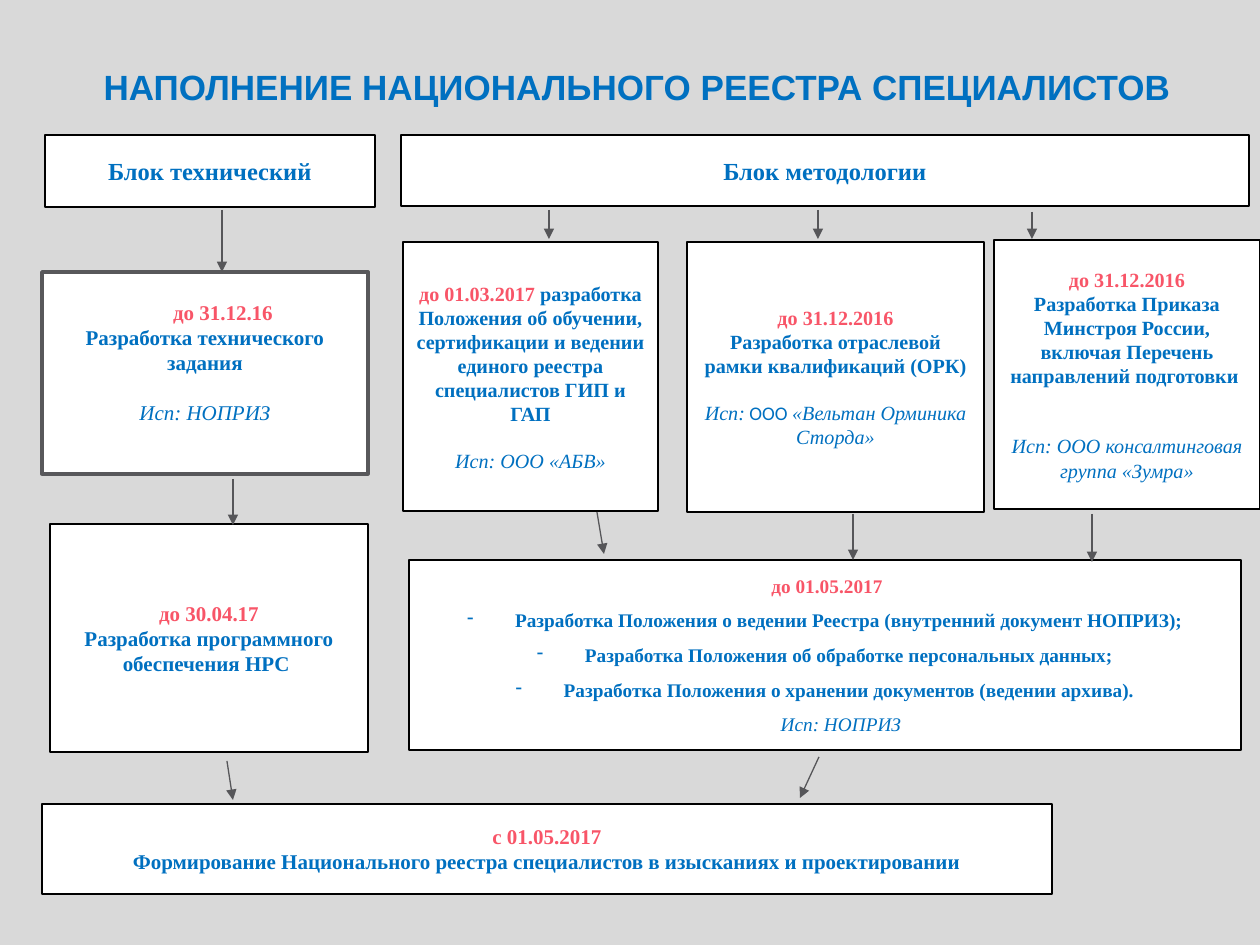
from lxml.etree import SubElement
from pptx import Presentation
from pptx.dml.color import RGBColor
from pptx.enum.shapes import MSO_CONNECTOR, MSO_SHAPE
from pptx.enum.text import MSO_ANCHOR, PP_ALIGN
from pptx.oxml.ns import qn
from pptx.util import Emu, Pt

PX = 914400 // 126
BLUE, RED, BLACK, GREY, ARROW = "0070C0", "F85568", "000000", "58585B", "565659"
SERIF = "Times New Roman"

STYLES = {
    "date": {"color": RED, "bold": True},
    "task": {"color": BLUE, "bold": True},
    "performer": {"color": BLUE, "italic": True},
    "form": {"color": BLUE, "font": "Calibri", "size": 11},
}

TITLE = {"at": (63, 38, 1148, 98), "size": 20, "font": "Arial",
         "lines": [{"runs": [("task", "НАПОЛНЕНИЕ НАЦИОНАЛЬНОГО РЕЕСТРА СПЕЦИАЛИСТОВ")]}]}

STAGES = [
    {"at": (45, 135, 330, 72), "size": 14,
     "lines": [{"runs": [("task", "Блок технический")]}]},
    {"at": (401, 135, 848, 71), "size": 14,
     "lines": [{"runs": [("task", "Блок методологии")]}]},
    {"at": (42, 272, 326, 202), "size": 12, "border": (GREY, 2), "bottom": 28,
     "lines": [
         {"runs": [("date", "до 31.12.16")], "margin": 36},
         {"runs": [("task", "Разработка технического задания")]},
         {"runs": [("performer", "Исп: НОПРИЗ")], "before": 13.8}]},
    {"at": (50, 524, 318, 228), "size": 12,
     "lines": [
         {"runs": [("date", "до 30.04.17")]},
         {"runs": [("task", "Разработка программного обеспечения НРС ")]}]},
    {"at": (403, 242, 255, 269), "size": 11.5,
     "lines": [
         {"runs": [("date", "до 01.03.2017 "),
                   ("task", "разработка Положения об обучении, сертификации и ведении "
                            "единого реестра специалистов ГИП и ГАП")]},
         {"runs": [("performer", "Исп: ООО «АБВ»")], "before": 12.6}]},
    {"at": (687, 242, 297, 270), "size": 11.5,
     "lines": [
         {"runs": [("date", "до 31.12.2016")]},
         {"runs": [("task", "Разработка отраслевой рамки квалификаций (ОРК)")]},
         {"runs": [("performer", "Исп:"), ("form", " ООО "),
                   ("performer", "«Вельтан Орминика Сторда»")], "before": 13.2}]},
    {"at": (994, 240, 266, 269), "size": 11.5,
     "lines": [
         {"runs": [("date", "до 31.12.2016")]},
         {"runs": [("task", "Разработка Приказа Минстроя России, включая Перечень "
                            "направлений подготовки ")]},
         {"runs": [("performer", "Исп: ООО консалтинговая группа «Зумра»")],
          "before": 26.4}]},
    {"at": (409, 560, 832, 190), "size": 11,
     "lines": [
         {"runs": [("date", "до 01.05.2017")], "margin": 4},
         *[{"runs": [("task", regulation)], "margin": 48, "bullet": "-", "spacing": 1.5}
           for regulation in (
               "Разработка Положения о ведении Реестра (внутренний документ НОПРИЗ);",
               "Разработка Положения об обработке персональных данных;",
               "Разработка Положения о хранении документов (ведении архива).")],
         {"runs": [("performer", "Исп: НОПРИЗ")], "margin": 32, "spacing": 1.5}]},
    {"at": (42, 804, 1010, 90), "size": 12,
     "lines": [
         {"runs": [("date", "с 01.05.2017")]},
         {"runs": [("task", "Формирование Национального реестра специалистов "
                            "в изысканиях и проектировании")]}]},
]

ARROWS = [
    (222, 210, 222, 272), (549, 210, 549, 239), (818, 210, 818, 239),
    (1032, 212, 1032, 239), (233, 479, 233, 525), (597, 512, 604, 554),
    (853, 514, 853, 560), (1092, 514, 1092, 562), (819, 757, 800, 798),
    (227, 761, 233, 800),
]


def px(*lengths):
    return [Emu(length * PX) for length in lengths]


def rgb(color):
    return RGBColor.from_string(color)


def write(shape, content):
    frame = shape.text_frame
    frame.word_wrap = True
    frame.vertical_anchor = MSO_ANCHOR.MIDDLE
    if "bottom" in content:
        frame.margin_bottom = px(content["bottom"])[0]
    for number, line in enumerate(content["lines"]):
        paragraph = frame.add_paragraph() if number else frame.paragraphs[0]
        paragraph.alignment = PP_ALIGN.CENTER
        paragraph.line_spacing = line.get("spacing", 1.0)
        if "before" in line:
            paragraph.space_before = Pt(line["before"])
        properties = paragraph._p.get_or_add_pPr()
        margin = line.get("margin", 0) * PX
        properties.set("marL", str(margin))
        properties.set("indent", str(-margin if "bullet" in line else 0))
        if "bullet" in line:
            SubElement(properties, qn("a:buChar")).set("char", line["bullet"])
        for style_name, text in line["runs"]:
            style = STYLES[style_name]
            run = paragraph.add_run()
            run.text = text
            run.font.name = style.get("font", content.get("font", SERIF))
            run.font.size = Pt(style.get("size", content["size"]))
            run.font.bold = style.get("bold", False)
            run.font.italic = style.get("italic", False)
            run.font.color.rgb = rgb(style["color"])


def add_stage(slide, stage):
    box = slide.shapes.add_shape(MSO_SHAPE.RECTANGLE, *px(*stage["at"]))
    box.shadow.inherit = False
    box.fill.solid()
    box.fill.fore_color.rgb = rgb("FFFFFF")
    color, width = stage.get("border", (BLACK, 1))
    box.line.color.rgb = rgb(color)
    box.line.width = Pt(width)
    write(box, stage)


def add_arrow(slide, ends):
    arrow = slide.shapes.add_connector(MSO_CONNECTOR.STRAIGHT, *px(*ends))
    arrow.line.color.rgb = rgb(ARROW)
    arrow.line.width = Pt(0.75)
    SubElement(arrow.line._get_or_add_ln(), qn("a:tailEnd")).set("type", "triangle")
    SubElement(arrow._element.spPr, qn("a:effectLst"))


def main():
    deck = Presentation()
    deck.slide_width, deck.slide_height = px(1260, 945)
    slide = deck.slides.add_slide(deck.slide_layouts[6])
    slide.background.fill.solid()
    slide.background.fill.fore_color.rgb = rgb("D9D9D9")
    write(slide.shapes.add_textbox(*px(*TITLE["at"])), TITLE)
    for stage in STAGES:
        add_stage(slide, stage)
    for ends in ARROWS:
        add_arrow(slide, ends)
    deck.save("out.pptx")


if __name__ == "__main__":
    main()
